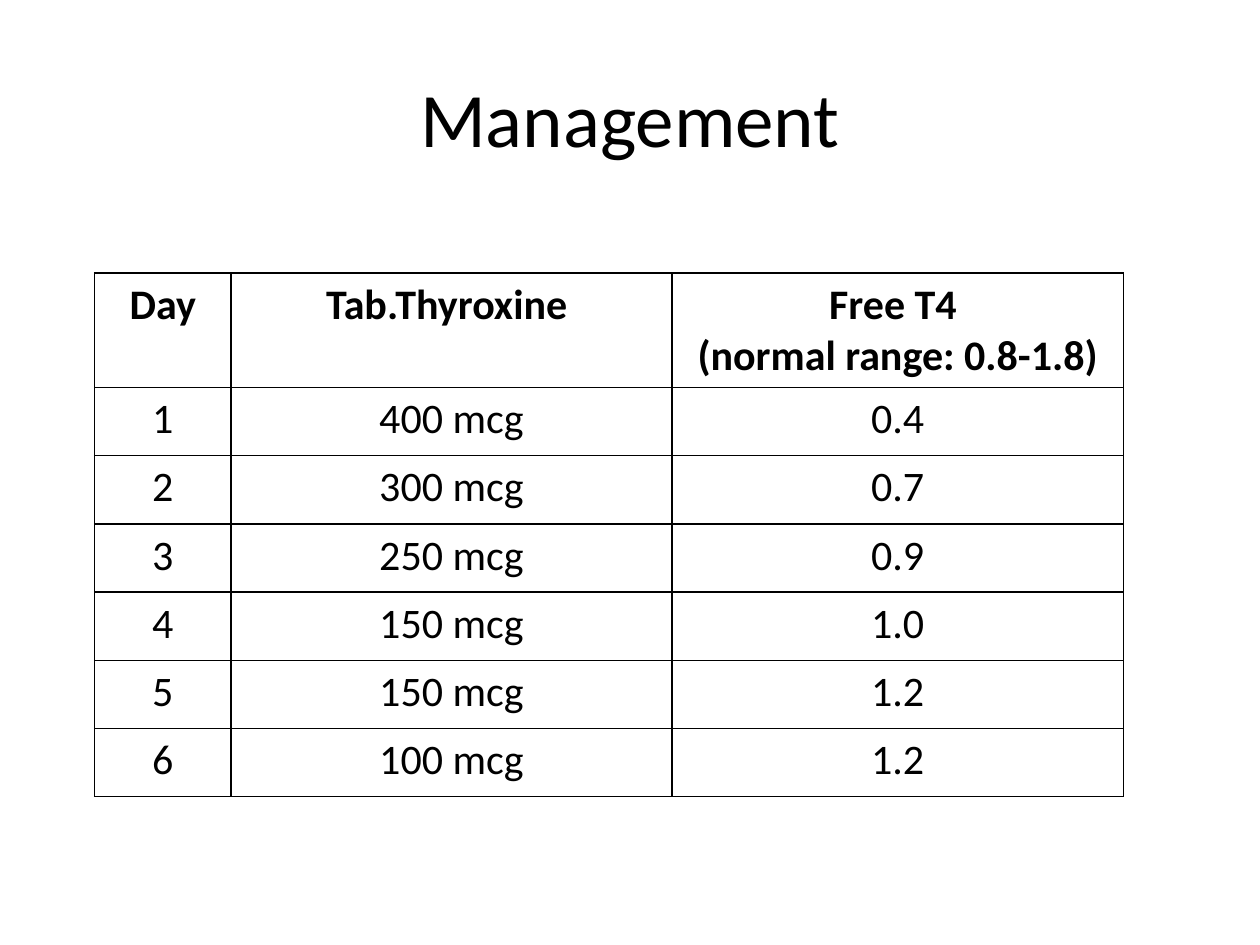
from dataclasses import dataclass

from lxml.etree import SubElement
from pptx import Presentation
from pptx.dml.color import RGBColor
from pptx.enum.text import MSO_ANCHOR, PP_ALIGN
from pptx.oxml.ns import qn
from pptx.slide import Slide
from pptx.util import Inches, Pt

GRID_COLUMNS, GRID_ROWS = 120, 90
SLIDE_WIDTH, SLIDE_HEIGHT = Inches(10), Inches(7.5)


def color(value):
    return RGBColor.from_string(value)


def across(columns):
    return round(SLIDE_WIDTH * columns / GRID_COLUMNS)


def down(rows):
    return round(SLIDE_HEIGHT * rows / GRID_ROWS)


def write(frame, text, *, font, size, ink, bold=False, anchor=MSO_ANCHOR.TOP):
    frame.word_wrap = True
    frame.vertical_anchor = anchor
    for index, line in enumerate(text.split("\n")):
        para = frame.paragraphs[0] if index == 0 else frame.add_paragraph()
        para.alignment = PP_ALIGN.CENTER
        span = para.add_run()
        span.text = line
        span.font.name = font
        span.font.size = Pt(size)
        span.font.bold = bold
        span.font.color.rgb = color(ink)


@dataclass
class Canvas:
    slide: Slide
    font: str = "Calibri"
    ink: str = "000000"
    paper: str = "FFFFFF"
    title_size: int = 44
    body_size: int = 24
    border: float = 1

    def background(self):
        fill = self.slide.background.fill
        fill.solid()
        fill.fore_color.rgb = color(self.paper)

    def title(self, text, left, top, width, height):
        box = self.slide.shapes.add_textbox(
            across(left), down(top), across(width), down(height)
        )
        write(box.text_frame, text, font=self.font, size=self.title_size,
              ink=self.ink, anchor=MSO_ANCHOR.MIDDLE)

    def outline(self, cell):
        properties = cell._tc.get_or_add_tcPr()
        for position, side in enumerate(("lnL", "lnR", "lnT", "lnB")):
            line = SubElement(properties, qn(f"a:{side}"), w=str(Pt(self.border)))
            fill = SubElement(line, qn("a:solidFill"))
            SubElement(fill, qn("a:srgbClr"), val=self.ink)
            properties.insert(position, line)

    def table(self, records, left, top, widths, heights):
        table = self.slide.shapes.add_table(
            len(records), len(widths), across(left), down(top),
            across(sum(widths)), down(sum(heights))
        ).table
        for column, width in zip(table.columns, widths):
            column.width = across(width)
        for row, height in zip(table.rows, heights):
            row.height = down(height)
        for row_index, record in enumerate(records):
            for column_index, text in enumerate(record):
                cell = table.cell(row_index, column_index)
                cell.fill.solid()
                cell.fill.fore_color.rgb = color(self.paper)
                write(cell.text_frame, text, font=self.font, size=self.body_size,
                      ink=self.ink, bold=row_index == 0)
                self.outline(cell)


def main():
    deck = Presentation()
    deck.slide_width, deck.slide_height = SLIDE_WIDTH, SLIDE_HEIGHT
    page = deck.slides.add_slide(deck.slide_layouts[6])
    canvas = Canvas(page)
    canvas.background()
    canvas.title("Management", left=6, top=3.6, width=108, height=15)

    header = ("Day", "Tab.Thyroxine ", "Free T4 \n(normal range: 0.8-1.8)")
    doses = (400, 300, 250, 150, 150, 100)
    levels = ("0.4", "0.7", "0.9", "1.0", "1.2", "1.2")
    treatment = [
        (str(day), f"{dose} mcg", level)
        for day, (dose, level) in enumerate(zip(doses, levels), start=1)
    ]
    canvas.table([header, *treatment], left=9, top=26, widths=(13, 42, 43),
                 heights=(10.9, *[6.5] * len(treatment)))
    deck.save("out.pptx")


if __name__ == "__main__":
    main()
